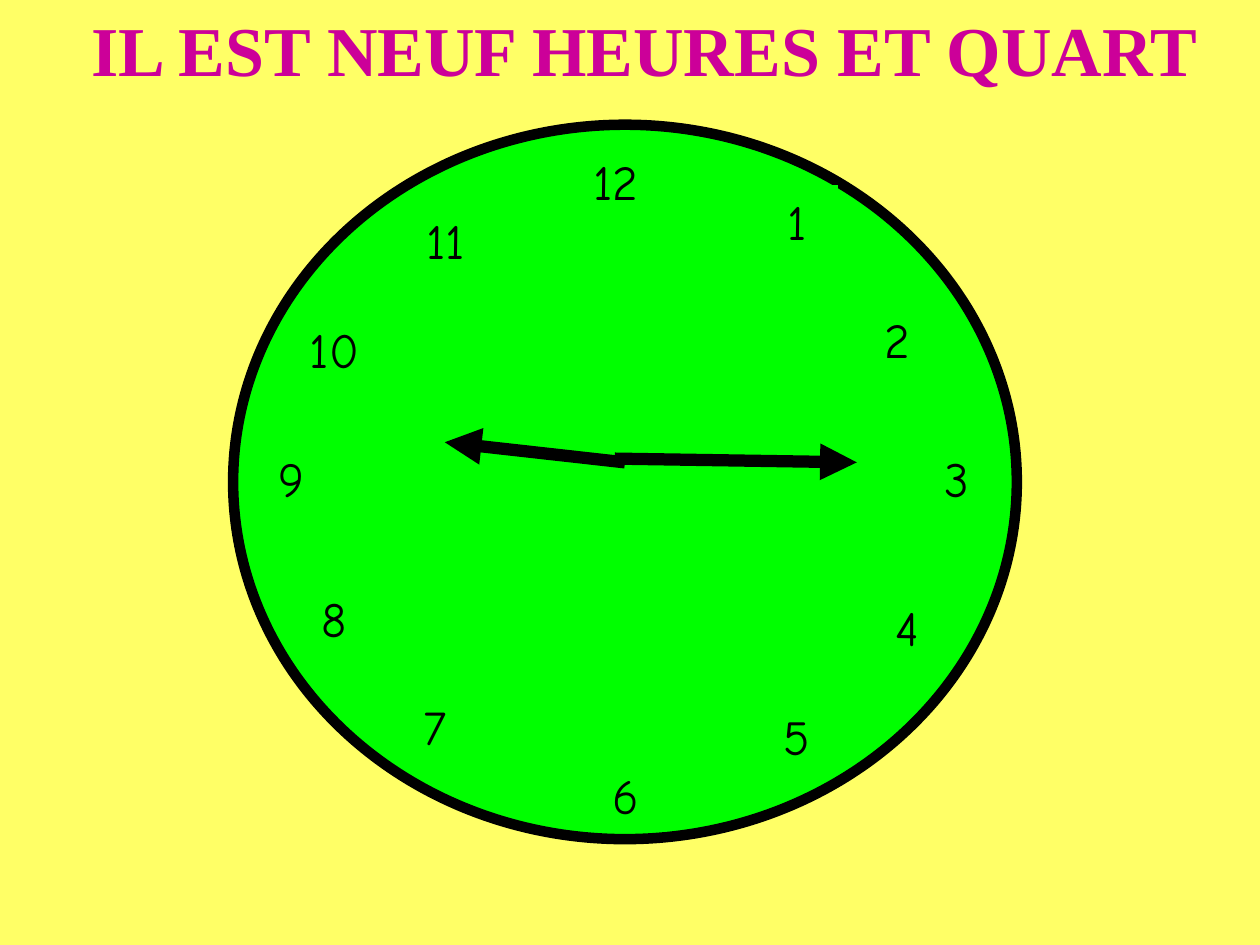
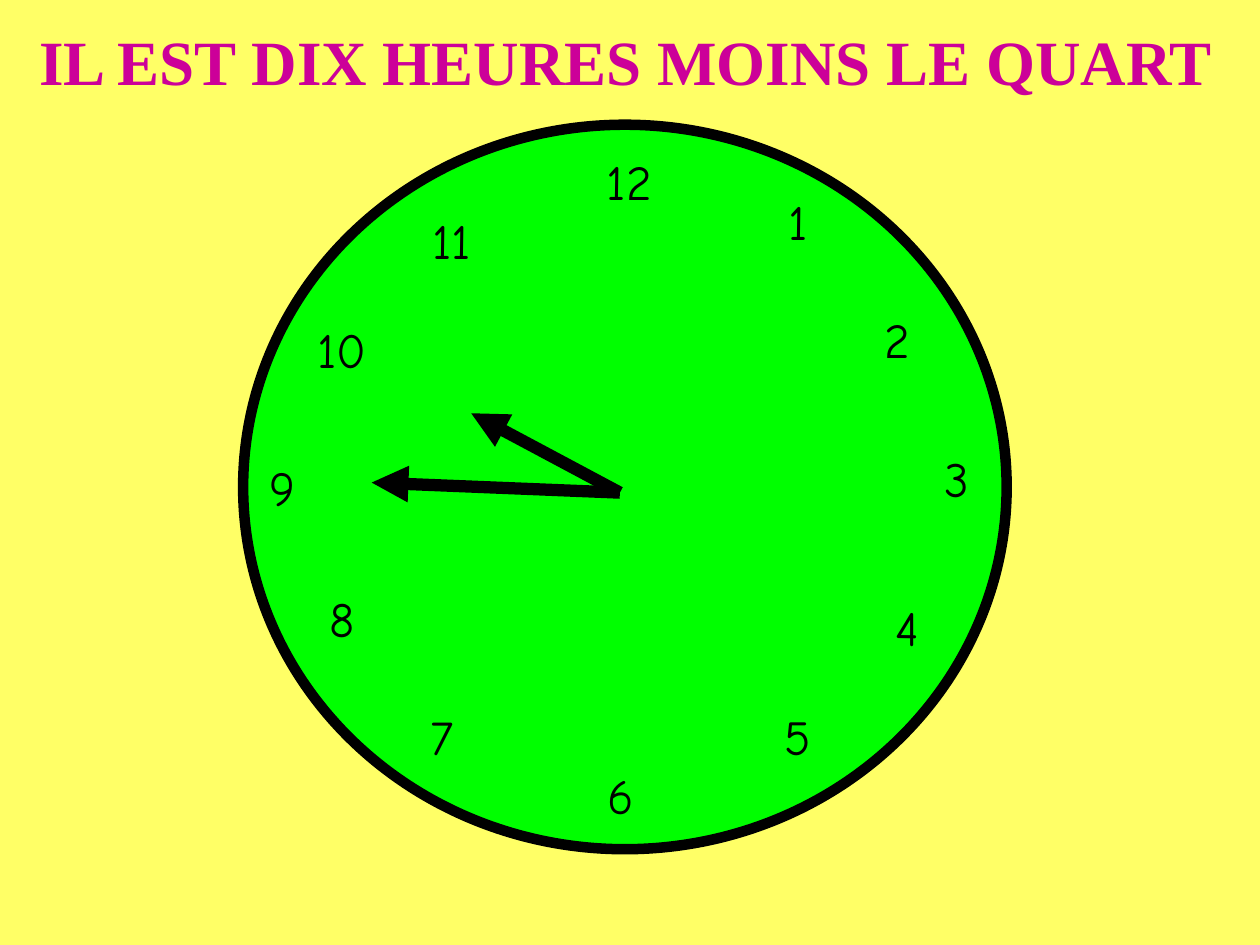
"""Builds two French time-telling slides, each with a title and a clock."""
from lxml.etree import SubElement
from pptx import Presentation
from pptx.dml.color import RGBColor
from pptx.enum.shapes import MSO_CONNECTOR, MSO_SHAPE
from pptx.enum.text import MSO_ANCHOR, MSO_AUTO_SIZE, PP_ALIGN
from pptx.oxml.ns import qn
from pptx.util import Emu, Pt

YELLOW = RGBColor(0xFF, 0xFF, 0x66)
GREEN = RGBColor(0x00, 0xFF, 0x00)
MAGENTA = RGBColor(0xCC, 0x00, 0x99)
BLACK = RGBColor(0x00, 0x00, 0x00)
TITLE_FONT = "Times New Roman"
NUMERAL_FONT = "Comic Neue"
EMU_PER_PX = 9144

NUMERAL_HEIGHT = 57
NUMERAL_TOPS = (147, 241, 351, 469, 556, 603, 548, 462, 351, 249, 162, 115)

CLOCKS = (
    {
        "title": "IL EST NEUF HEURES ET QUART",
        "title_box": (43, 0, 937, 77),
        "title_size": 40,
        "dial": (185, 99, 622, 567),
        "hands": ((680, 367, 488, 364), (353, 351, 496, 367)),
        "lefts": (600, 680, 727, 688, 600, 464, 313, 233, 199, 233, 321, 456),
        "tops": NUMERAL_TOPS,
        "numeral_width": 65,
        "numeral_fill": GREEN,
    },
    {
        "title": "IL EST DIX HEURES MOINS LE QUART",
        "title_box": (12, 13, 969, 70),
        "title_size": 36,
        "dial": (193, 99, 606, 575),
        "hands": ((295, 383, 492, 391), (374, 328, 492, 391)),
        "lefts": (602, 681, 728, 689, 602, 461, 319, 240, 193, 240, 327, 468),
        "tops": NUMERAL_TOPS[:6] + (556, 462, 358) + NUMERAL_TOPS[9:],
        "numeral_width": 63,
        "numeral_fill": None,
    },
)


def px(*lengths):
    """Turn pixel lengths into EMU."""
    return [Emu(length * EMU_PER_PX) for length in lengths]


def write(box, text, *, font, size, color, bold=False):
    """Write one centred line into a box that grows with its text."""
    frame = box.text_frame
    frame.word_wrap = True
    frame.auto_size = MSO_AUTO_SIZE.SHAPE_TO_FIT_TEXT
    frame.vertical_anchor = MSO_ANCHOR.TOP
    para = frame.paragraphs[0]
    para.alignment = PP_ALIGN.CENTER
    before = SubElement(para._p.get_or_add_pPr(), qn("a:spcBef"))
    SubElement(before, qn("a:spcPct"), val="50000")
    span = para.add_run()
    span.text = text
    span.font.name = font
    span.font.size = Pt(size)
    span.font.bold = bold
    span.font.color.rgb = color


class ClockDeck:
    """Holds the deck style, the current page and its clock group."""

    def __init__(self):
        """Open an empty deck of the right size."""
        self.deck = Presentation()
        self.deck.slide_width, self.deck.slide_height = px(1000, 750)

    def add_page(self):
        """Start a page with the yellow background."""
        self.page = self.deck.slides.add_slide(self.deck.slide_layouts[6])
        fill = self.page.background.fill
        fill.solid()
        fill.fore_color.rgb = YELLOW

    def add_title(self, text, bounds, size):
        """Add the sentence that tells the time."""
        box = self.page.shapes.add_textbox(*px(*bounds))
        write(box, text, font=TITLE_FONT, size=size, color=MAGENTA, bold=True)

    def add_plain_shape(self, kind, bounds, fill):
        """Add a filled shape without line or shadow to the clock."""
        shape = self.clock.shapes.add_shape(kind, *px(*bounds))
        shape.shadow.inherit = False
        shape.fill.solid()
        shape.fill.fore_color.rgb = fill
        shape.line.fill.background()
        return shape

    def add_dial(self, bounds):
        """Start a clock group with its outlined dial."""
        self.clock = self.page.shapes.add_group_shape()
        dial = self.add_plain_shape(MSO_SHAPE.OVAL, bounds, GREEN)
        dial.line.color.rgb = BLACK
        dial.line.width = Pt(6)

    def add_hand(self, ends):
        """Add a clock hand whose arrowhead is at its first end."""
        hand = self.clock.shapes.add_connector(MSO_CONNECTOR.STRAIGHT, *px(*ends))
        hand.line.color.rgb = BLACK
        hand.line.width = Pt(7)
        SubElement(hand.line._get_or_add_ln(), qn("a:headEnd"), type="triangle")
        SubElement(hand._element.spPr, qn("a:effectLst"))

    def add_numeral(self, hour, bounds, fill):
        """Add one hour to the dial, on a filled tile if a fill is given."""
        if fill is None:
            box = self.clock.shapes.add_textbox(*px(*bounds))
        else:
            box = self.add_plain_shape(MSO_SHAPE.RECTANGLE, bounds, fill)
        write(box, str(hour), font=NUMERAL_FONT, size=28, color=BLACK)


def main():
    """Build both clock pages and save the deck."""
    builder = ClockDeck()
    for clock in CLOCKS:
        builder.add_page()
        builder.add_title(clock["title"], clock["title_box"], clock["title_size"])
        builder.add_dial(clock["dial"])
        for ends in clock["hands"]:
            builder.add_hand(ends)
        for hour, (left, top) in enumerate(zip(clock["lefts"], clock["tops"]), 1):
            bounds = (left, top, clock["numeral_width"], NUMERAL_HEIGHT)
            builder.add_numeral(hour, bounds, clock["numeral_fill"])
    builder.deck.save("out.pptx")


if __name__ == "__main__":
    main()
